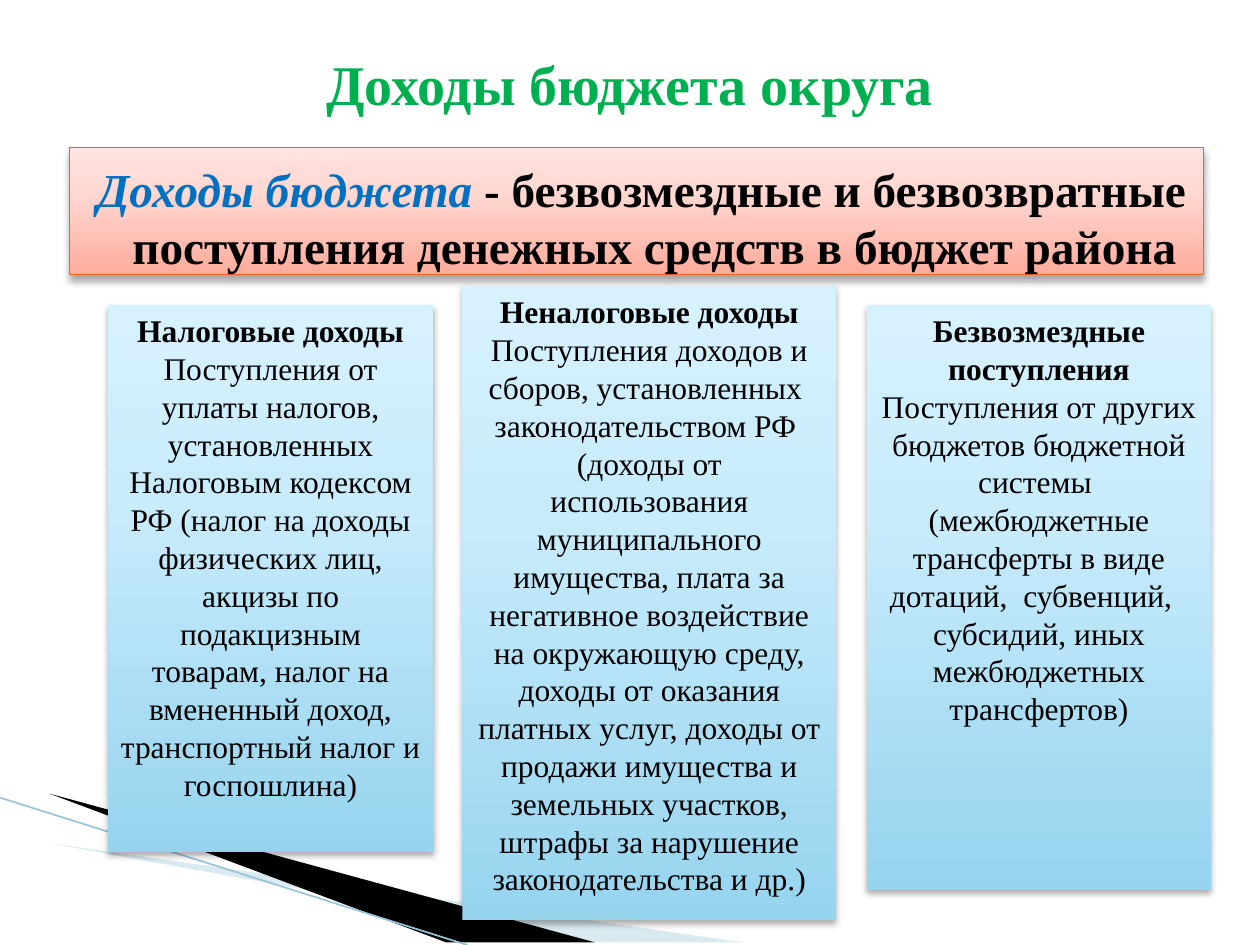
from lxml import etree
from pptx import Presentation
from pptx.dml.color import RGBColor
from pptx.enum.shapes import MSO_CONNECTOR, MSO_SHAPE
from pptx.enum.text import MSO_ANCHOR as Anchor, PP_ALIGN as Align
from pptx.oxml import parse_xml
from pptx.oxml.ns import nsdecls, qn
from pptx.util import Cm, Pt

FONT = "Times New Roman"
BLACK = RGBColor(0x00, 0x00, 0x00)
GREEN = RGBColor(0x00, 0xB0, 0x50)
BLUE = RGBColor(0x00, 0x70, 0xC0)
ORANGE = RGBColor(0xEB, 0x64, 0x1B)
PALE_BLUE = RGBColor(0xA0, 0xCB, 0xDC)
EDGE_BLUE = RGBColor(0x97, 0xC5, 0xD8)
PINK_STOPS = [(0, RGBColor(0xFF, 0xAC, 0x9C)), (65, RGBColor(0xFF, 0xD8, 0xD2)),
              (100, RGBColor(0xFF, 0xE4, 0xDF))]
SKY_STOPS = [(0, RGBColor(0x96, 0xD4, 0xEE)), (65, RGBColor(0xC9, 0xEC, 0xFC)),
             (100, RGBColor(0xD7, 0xF2, 0xFF))]


def add_panel(box, stops, opacity, blur, distance):
    """Rectangle with a bottom-to-top gradient and a soft shadow below."""
    panel = slide.shapes.add_shape(MSO_SHAPE.RECTANGLE, *[Cm(v) for v in box])
    panel.fill.gradient()
    panel.fill.gradient_angle = 90
    stop_list = panel._element.spPr.find(".//" + qn("a:gsLst"))
    for old_stop in list(stop_list):
        stop_list.remove(old_stop)
    for position, color in stops:
        stop_list.append(parse_xml(
            f'<a:gs {nsdecls("a")} pos="{position * 1000}"><a:srgbClr val="{color}"/></a:gs>'))
    panel.line.fill.background()
    panel._element.spPr.append(parse_xml(
        f'<a:effectLst {nsdecls("a")}><a:outerShdw blurRad="{Pt(blur)}" dist="{Pt(distance)}" '
        f'dir="5400000" rotWithShape="0"><a:srgbClr val="{BLACK}">'
        f'<a:alpha val="{opacity * 1000}"/></a:srgbClr></a:outerShdw></a:effectLst>'))
    panel.text_frame.word_wrap = True
    panel.text_frame.vertical_anchor = Anchor.TOP
    return panel


def set_font(font, size, color, bold):
    font.name = FONT
    font.size = Pt(size)
    font.color.rgb = color
    font.bold = bold


prs = Presentation()
prs.slide_width, prs.slide_height = Cm(25.4), Cm(19.05)
slide = prs.slides.add_slide(prs.slide_layouts[6])

# Corner bands and their edge line
bands = [
    ([(1.4, 16.52), (15.11, 19.05), (11.58, 19.05)], PALE_BLUE, 40),
    ([(1.36, 16.48), (11.61, 19.05), (9.45, 19.05)], BLACK, 100),
]
for corners, color, opacity in bands:
    builder = slide.shapes.build_freeform(*corners[0], scale=Cm(1))
    builder.add_line_segments(corners[1:], close=True)
    band = builder.convert_to_shape()
    band.shadow.inherit = False
    band.fill.solid()
    band.fill.fore_color.rgb = color
    band.line.fill.background()
    if opacity < 100:
        tint = band._element.spPr.find(qn("a:solidFill"))[0]
        etree.SubElement(tint, qn("a:alpha"), val=str(opacity * 1000))

edge = slide.shapes.add_connector(MSO_CONNECTOR.STRAIGHT, Cm(0), Cm(16.08), Cm(9.42), Cm(19.05))
edge.line.color.rgb = EDGE_BLUE
edge.line.width = Pt(0.95)
etree.SubElement(edge._element.spPr, qn("a:effectLst"))

# Title
title = slide.shapes.add_textbox(Cm(1.27), Cm(0.76), Cm(22.86), Cm(1.83)).text_frame
title.word_wrap = True
title.vertical_anchor = Anchor.MIDDLE
heading = title.paragraphs[0]
heading.text = "Доходы бюджета округа"
heading.alignment = Align.CENTER
set_font(heading.font, 32, GREEN, True)

# Definition
definition = add_panel((1.4, 2.97, 22.86, 2.57), PINK_STOPS, 35, 4, 3)
definition.line.color.rgb = ORANGE
definition.line.width = Pt(0.75)
definition.text_frame.margin_top = Cm(0.27)
sentence = definition.text_frame.paragraphs[0]
sentence.alignment = Align.LEFT
indents = sentence._p.get_or_add_pPr()
indents.set("marL", str(Cm(1.02)))
indents.set("indent", str(Cm(-0.71)))
for words, color, italic in [
    ("Доходы бюджета ", BLUE, True),
    ("- безвозмездные и безвозвратные поступления денежных средств в бюджет района",
     BLACK, False),
]:
    run = sentence.add_run()
    run.text = words
    set_font(run.font, 27, color, True)
    run.font.italic = italic

# Three kinds of income: the first paragraph of each is its bold heading
incomes = [
    ((2.18, 6.15, 6.55, 11.02), [
        "Налоговые доходы",
        "Поступления от уплаты налогов, установленных Налоговым кодексом РФ "
        "(налог на доходы физических лиц, акцизы по подакцизным товарам, "
        "налог на вмененный доход, транспортный налог и госпошлина)"]),
    ((9.32, 5.77, 7.54, 12.78), [
        "Неналоговые доходы",
        "Поступления доходов и сборов, установленных  законодательством РФ ",
        "(доходы от использования муниципального имущества, плата за негативное "
        "воздействие на окружающую среду, доходы от оказания платных услуг, "
        "доходы от продажи имущества и земельных участков, штрафы за нарушение "
        "законодательства и др.)"]),
    ((17.48, 6.15, 6.93, 11.79), [
        "Безвозмездные поступления",
        "Поступления от других бюджетов бюджетной системы ",
        "(межбюджетные трансферты в виде дотаций,  субвенций,   субсидий, "
        "иных межбюджетных трансфертов)"]),
]
for box, texts in incomes:
    frame = add_panel(box, SKY_STOPS, 32, 3.5, 2.2).text_frame
    for index, words in enumerate(texts):
        paragraph = frame.add_paragraph() if index else frame.paragraphs[0]
        paragraph.text = words
        paragraph.alignment = Align.CENTER
        set_font(paragraph.font, 18, BLACK, index == 0)

prs.save("out.pptx")
